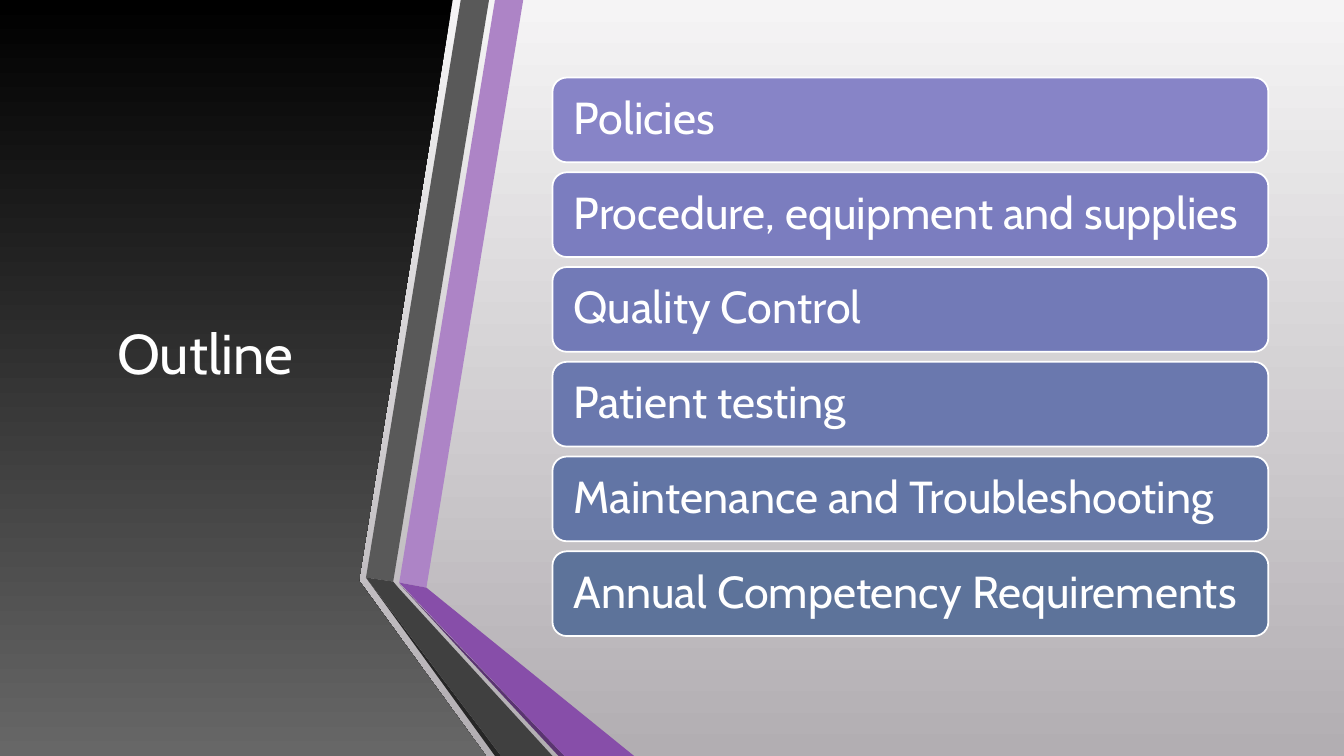
"""Build the outline slide with its folded ribbons and topic cards."""
from dataclasses import dataclass

from pptx import Presentation
from pptx.dml.color import RGBColor
from pptx.enum.shapes import MSO_SHAPE
from pptx.enum.text import MSO_ANCHOR, MSO_AUTO_SIZE, PP_ALIGN
from pptx.util import Inches, Pt

ROUNDED = MSO_SHAPE.ROUNDED_RECTANGLE
MIDDLE = MSO_ANCHOR.MIDDLE
NO_AUTOFIT = MSO_AUTO_SIZE.NONE
LEFT, CENTER = PP_ALIGN.LEFT, PP_ALIGN.CENTER

HEADING = "Outline"
TOPICS = [
    ("Policies", "8784C7"),
    ("Procedure, equipment and supplies", "7B7DBF"),
    ("Quality Control", "727AB7"),
    ("Patient testing", "6A78AE"),
    ("Maintenance and Troubleshooting", "6275A5"),
    ("Annual Competency Requirements", "5D739A"),
]
PANEL = [(0, 0), (4.49, 0), (3.56, 5.76), (4.82, 7.5), (0, 7.5)]
RIBBONS = [
    ("AD84C6", [(3.96, 5.78), (4.23, 5.83), (5.19, 0), (4.91, 0)]),
    ("595959", [(4.85, 0), (4.57, 0), (3.63, 5.73), (3.9, 5.77)]),
    ("262626", [(3.63, 5.73), (4.91, 7.5), (4.97, 7.5)]),
    ("5A3471", [(3.96, 5.79), (5.54, 7.5), (5.6, 7.5)]),
    ("874EA9", [(3.96, 5.78), (5.6, 7.5), (6.29, 7.5), (4.23, 5.83)]),
    ("404040", [(5.48, 7.5), (3.95, 5.83), (3.9, 5.77), (3.63, 5.73), (4.97, 7.5)]),
]
SLIDE_SIZE = (13.33, 7.5)
HEADING_BOX = (0.59, 0.75, 2.89, 5.58)
CARD_LEFT, CARD_TOP, CARD_WIDTH, CARD_HEIGHT = 5.48, 0.77, 7.1, 0.84
CARD_PITCH, CARD_INSET = 0.94, 0.17


@dataclass(frozen=True)
class Theme:
    font: str = "Cabin"
    text: str = "FFFFFF"
    outline: str = "FFFFFF"
    backdrop: tuple = ("F5F4F5", "B2AEB2")
    panel: tuple = ("000000", "676767")
    heading_size: float = 40
    topic_size: float = 32
    outline_width: float = 1.25


THEME = Theme()


def rgb(code):
    """Return the colour for a hex code."""
    return RGBColor.from_string(code)


def fill_downwards(fill, colours):
    """Fade from the first colour at the top to the second at the bottom."""
    fill.gradient()
    fill.gradient_angle = 270
    for stop, colour, position in zip(fill.gradient_stops, colours, (0, 1)):
        stop.color.rgb = rgb(colour)
        stop.position = position


def add_outline(slide, corners):
    """Add a closed, borderless polygon."""
    points = [(Inches(x), Inches(y)) for x, y in corners]
    builder = slide.shapes.build_freeform(*points[0])
    builder.add_line_segments(points[1:], close=True)
    polygon = builder.convert_to_shape()
    polygon.shadow.inherit = False
    polygon.line.fill.background()
    return polygon


def write(frame, wording, size, alignment):
    """Write one middle-anchored line in the theme font."""
    frame.text = wording
    frame.word_wrap = True
    frame.auto_size = NO_AUTOFIT
    frame.vertical_anchor = MIDDLE
    paragraph = frame.paragraphs[0]
    paragraph.alignment = alignment
    paragraph.line_spacing = 0.9
    font = paragraph.runs[0].font
    font.name, font.size = THEME.font, Pt(size)
    font.color.rgb = rgb(THEME.text)


def add_heading(slide, panel):
    """Place the title just above the dark panel."""
    heading = slide.shapes.title
    heading.left, heading.top, heading.width, heading.height = map(Inches, HEADING_BOX)
    write(heading.text_frame, HEADING, THEME.heading_size, CENTER)
    panel.element.addnext(heading.element)


def add_card(slide, row, topic, colour):
    """Add the topic card for one row."""
    box = (CARD_LEFT, CARD_TOP + row * CARD_PITCH, CARD_WIDTH, CARD_HEIGHT)
    card = slide.shapes.add_shape(ROUNDED, *map(Inches, box))
    card.shadow.inherit = False
    card.fill.solid()
    card.fill.fore_color.rgb = rgb(colour)
    card.line.color.rgb = rgb(THEME.outline)
    card.line.width = Pt(THEME.outline_width)
    frame = card.text_frame
    frame.margin_left = frame.margin_right = Inches(CARD_INSET)
    write(frame, topic, THEME.topic_size, LEFT)


def main():
    """Assemble and save the slide."""
    deck = Presentation()
    deck.slide_width, deck.slide_height = map(Inches, SLIDE_SIZE)
    slide = deck.slides.add_slide(deck.slide_layouts[5])
    fill_downwards(slide.background.fill, THEME.backdrop)
    panel = add_outline(slide, PANEL)
    fill_downwards(panel.fill, THEME.panel)
    add_heading(slide, panel)
    for colour, corners in RIBBONS:
        ribbon = add_outline(slide, corners)
        ribbon.fill.solid()
        ribbon.fill.fore_color.rgb = rgb(colour)
    for row, (topic, colour) in enumerate(TOPICS):
        add_card(slide, row, topic, colour)
    deck.save("out.pptx")


if __name__ == "__main__":
    main()
